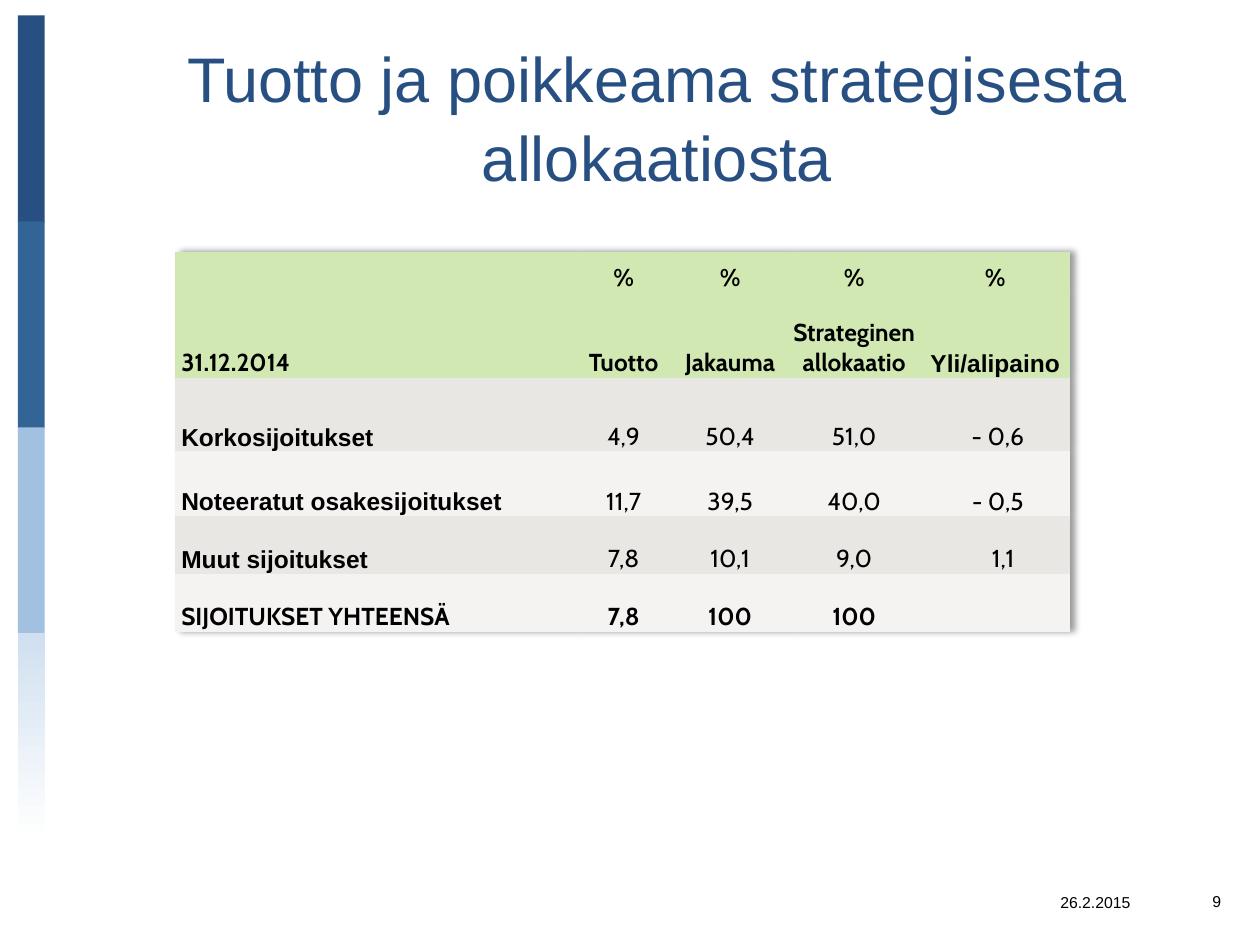
from dataclasses import dataclass
from typing import Any
from lxml import etree
from pptx import Presentation
from pptx.dml.color import RGBColor
from pptx.enum import shapes, text
from pptx.oxml import ns
from pptx.util import Pt

COLOURS = {
    "navy": "274F81", "blue": "326496", "sky": "A2C1E0", "mist": "D0E0F0",
    "white": "FFFFFF", "black": "000000", "green": "D1E8B2",
    "stone": "E9E7E3", "pale": "F5F3F2",
}
PLAIN_STYLE = "{2D5ABB26-0587-4C30-8999-92F81FD0307C}"
CENTER, LEFT, RIGHT = text.PP_ALIGN.CENTER, text.PP_ALIGN.LEFT, text.PP_ALIGN.RIGHT


def colour(name):
    return RGBColor.from_string(COLOURS[name])


def assign(target, values):
    for name, value in values.items():
        setattr(target, name, value)


@dataclass
class SlideBuilder:
    page: Any
    heading_font: str = "Arial"
    table_font: str = "Cabin"

    def fill_text(self, frame, content, align, ink="black", spacing=None, **font):
        for index, line in enumerate(content.split("\n")):
            para = frame.add_paragraph() if index else frame.paragraphs[0]
            assign(para, {"alignment": align, "line_spacing": spacing})
            span = para.add_run()
            span.text = line
            assign(span.font, font)
            span.font.color.rgb = colour(ink)

    def textbox(self, place, content, align, size, **style):
        box = self.page.shapes.add_textbox(*map(Pt, place))
        assign(box.text_frame, {"word_wrap": True,
                                "vertical_anchor": text.MSO_ANCHOR.MIDDLE})
        self.fill_text(box.text_frame, content, align, size=Pt(size),
                       name=self.heading_font, **style)

    def stripe(self, place, fill, fade=None):
        bar = self.page.shapes.add_shape(
            shapes.MSO_SHAPE.RECTANGLE, *map(Pt, place))
        bar.shadow.inherit = False
        bar.line.fill.background()
        if fade:
            bar.fill.gradient()
            bar.fill.gradient_angle = 90
            for stop, name in zip(bar.fill.gradient_stops, (fade, fill)):
                stop.color.rgb = colour(name)
        else:
            bar.fill.solid()
            bar.fill.fore_color.rgb = colour(fill)

    def cell(self, cell, content, fill, align, font, bold, indent):
        assign(cell, {"margin_left": Pt(indent), "margin_right": 0,
                      "margin_top": 0, "margin_bottom": 0,
                      "vertical_anchor": text.MSO_ANCHOR.BOTTOM})
        cell.fill.solid()
        cell.fill.fore_color.rgb = colour(fill)
        if content:
            self.fill_text(cell.text_frame, content, align,
                           size=Pt(14), name=font, bold=bold)

    def table(self, place, widths, heights):
        frame = self.page.shapes.add_table(
            len(heights), len(widths), *map(Pt, place))
        table = frame.table
        assign(table, {"first_row": False, "horz_banding": False})
        for column, width in zip(table.columns, widths):
            column.width = Pt(width)
        for row, height in zip(table.rows, heights):
            row.height = Pt(height)
        properties = table._tbl.tblPr
        style = properties.find(ns.qn("a:tableStyleId"))
        style.text = PLAIN_STYLE
        effects = etree.Element(ns.qn("a:effectLst"))
        style.addprevious(effects)
        shadow = etree.SubElement(effects, ns.qn("a:outerShdw"),
                                  blurRad="50800", dist="38100", algn="l")
        tint = etree.SubElement(shadow, ns.qn("a:srgbClr"), val=COLOURS["black"])
        etree.SubElement(tint, ns.qn("a:alpha"), val="40000")
        return table


def main():
    deck = Presentation()
    assign(deck, {"slide_width": Pt(720), "slide_height": Pt(540)})
    builder = SlideBuilder(deck.slides.add_slide(deck.slide_layouts[6]))

    for index, fill in enumerate(("navy", "blue", "sky", "mist")):
        builder.stripe((10.2, 8.8 + index * 117.7, 15.4, 118.5), fill,
                       "white" if fill == "mist" else None)

    builder.textbox((31, 20.2, 689, 90.7),
                    "Tuotto ja poikkeama strategisesta allokaatiosta",
                    CENTER, 36, ink="navy", spacing=1.05)

    rows = [
        ("green", ("", "%", "%", "%", "%")),
        ("green", ("31.12.2014", "Tuotto", "Jakauma",
                   "Strateginen\nallokaatio", "Yli/alipaino")),
        ("stone", ("Korkosijoitukset", "4,9", "50,4", "51,0", "- 0,6")),
        ("pale", ("Noteeratut osakesijoitukset", "11,7", "39,5", "40,0", "- 0,5")),
        ("stone", ("Muut sijoitukset", "7,8", "10,1", "9,0", "1,1")),
        ("pale", ("SIJOITUKSET YHTEENSÄ", "7,8", "100", "100", "")),
    ]
    indents = {"- 0,6": 3, "- 0,5": 3, "1,1": 9}
    table = builder.table((100.1, 144, 511.2, 218.9),
                          (228.2, 56.2, 65.5, 76.3, 85),
                          (23, 48.8, 42.2, 37, 33.1, 33.1))
    for row, (fill, values) in enumerate(rows):
        asset = 2 <= row <= 4
        for column, value in enumerate(values):
            label = column == 0
            arial = (label and asset) or value == "Yli/alipaino"
            builder.cell(table.cell(row, column), value, fill,
                         LEFT if label else CENTER,
                         builder.heading_font if arial else builder.table_font,
                         label or not asset,
                         3.5 if label else indents.get(value, 0))

    builder.textbox((659.5, 500.4, 45.4, 28.8), "9", RIGHT, 9)
    builder.textbox((584.6, 501.1, 68.4, 28.8), "26.2.2015", RIGHT, 9)
    deck.save("out.pptx")


if __name__ == "__main__":
    main()
